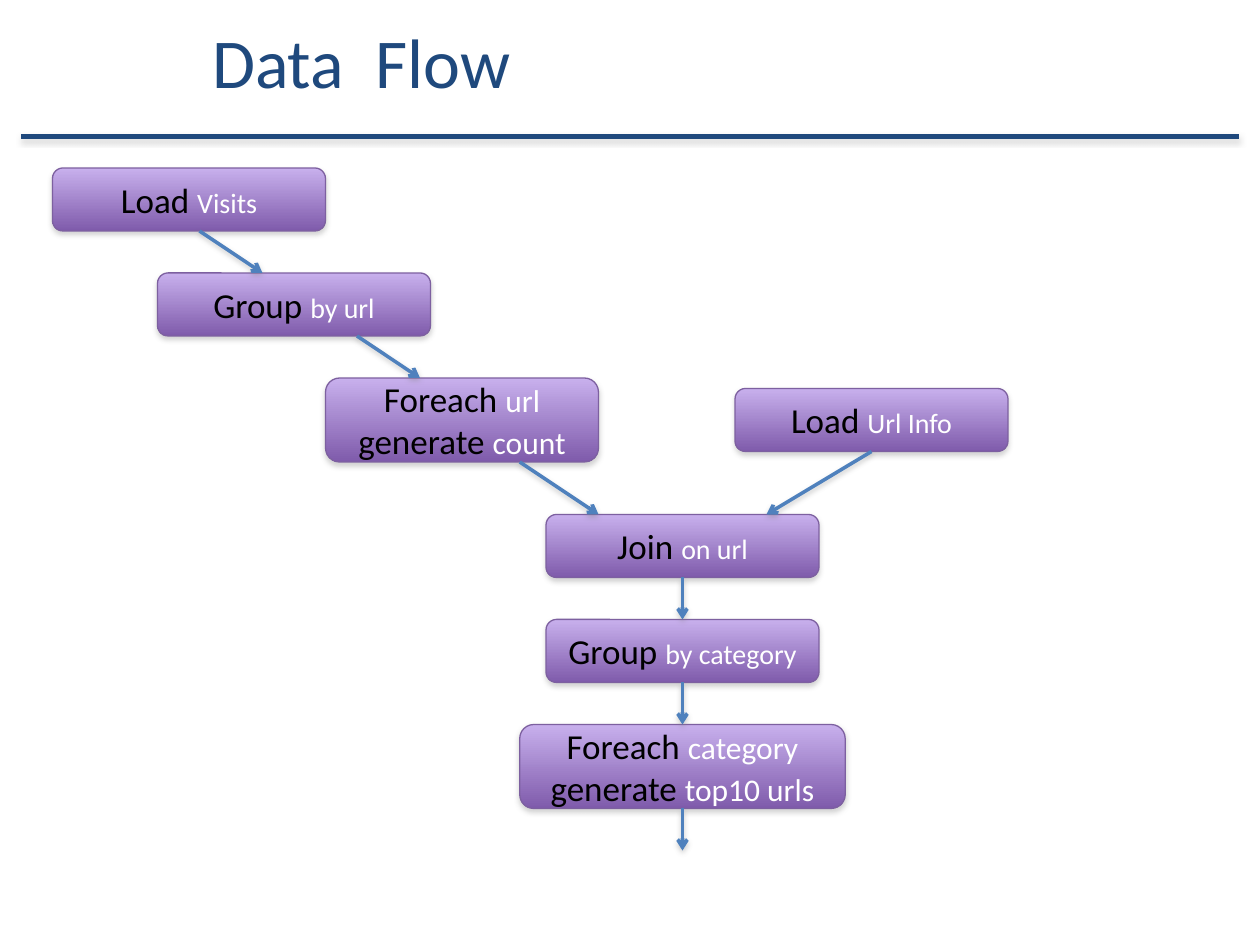
from dataclasses import dataclass

from lxml import etree
from pptx import Presentation
from pptx import util as u
from pptx.dml.color import RGBColor
from pptx.enum import shapes, text
from pptx.oxml.ns import qn

PX = 7620  # EMU per px, 120 px to the inch
BOTTOM, TOP = 2, 0


@dataclass(frozen=True)
class Theme:
    font: str = "Calibri"
    navy: str = "1F497D"
    arrow: str = "4F81BD"
    box_top: str = "C8B0ED"
    box_bottom: str = "7F5BAB"
    box_edge: str = "7D60A0"
    keyword: str = "000000"
    detail: str = "FFFFFF"
    shadow: str = "808080"
    title_size: int = 40
    keyword_size: int = 20
    detail_size: int = 16
    tall_detail_size: int = 18


THEME = Theme()

# name: (left, top, width, height), lines of (keyword, detail)
STEPS = {
    "load visits": ((50, 160, 260, 60), [("Load ", "Visits")]),
    "group by url": ((150, 260, 260, 60), [("Group ", "by url")]),
    "count": ((310, 360, 260, 80), [("Foreach ", "url"), ("generate ", "count")]),
    "load url info": ((700, 370, 260, 60), [("Load ", "Url Info")]),
    "join": ((520, 490, 260, 60), [("Join ", "on url")]),
    "group by category": ((520, 590, 260, 60), [("Group ", "by category")]),
    "top urls": ((495, 690, 310, 80),
                 [("Foreach ", "category"), ("generate ", "top10 urls")]),
}

# start, end, step joined at its bottom, step joined at its top
ARROWS = [
    ((190, 220), (250, 260), None, None),
    ((340, 320), (400, 360), None, None),
    ((495, 440), (570, 490), None, None),
    ((830, 430), (730, 490), "load url info", None),
    ((650, 550), (650, 590), "join", "group by category"),
    ((650, 650), (650, 690), "group by category", "top urls"),
    ((650, 770), (650, 810), "top urls", None),
]


def px(*lengths):
    return [u.Emu(length * PX) for length in lengths]


def add_text(paragraph, words, *, size, color):
    run = paragraph.add_run()
    run.text = words
    run.font.name = THEME.font
    run.font.size = u.Pt(size)
    run.font.color.rgb = RGBColor.from_string(color)


def add_shadow(shape, alpha, distance):
    """Give the shape a soft shadow straight below it."""
    effects = etree.SubElement(shape._element.spPr, qn("a:effectLst"))
    outer = etree.SubElement(
        effects, qn("a:outerShdw"), blurRad=str(u.Pt(3)),
        dist=str(u.Pt(distance)), dir="5400000", rotWithShape="0")
    color = etree.SubElement(outer, qn("a:srgbClr"), val=THEME.shadow)
    etree.SubElement(color, qn("a:alpha"), val=str(alpha * 1000))


def add_line(slide, start, end, *, color, width):
    line = slide.shapes.add_connector(
        shapes.MSO_CONNECTOR.STRAIGHT, *px(*start, *end))
    line.line.color.rgb = RGBColor.from_string(color)
    line.line.width = u.Pt(width)
    return line


def build_header(slide, box):
    """Fill the title placeholder and draw the rule below it."""
    left, top, width, height = box
    title = slide.shapes.title
    title.left, title.top, title.width, title.height = px(*box)
    frame = title.text_frame
    frame.word_wrap = True
    frame.auto_size = text.MSO_AUTO_SIZE.NONE
    frame.vertical_anchor = text.MSO_ANCHOR.MIDDLE
    paragraph = frame.paragraphs[0]
    paragraph.alignment = text.PP_ALIGN.LEFT
    add_text(paragraph, "Data  Flow", size=THEME.title_size, color=THEME.navy)
    rule_y = top + height + 20
    rule = add_line(slide, (left - 170, rule_y), (left + width - 10, rule_y),
                    color=THEME.navy, width=3)
    add_shadow(rule, 35, 1.8)


def build_step(slide, box, lines):
    step = slide.shapes.add_shape(
        shapes.MSO_SHAPE.ROUNDED_RECTANGLE, *px(*box))
    step.fill.gradient()
    step.fill.gradient_angle = 270
    for stop, color in zip(step.fill.gradient_stops,
                           (THEME.box_top, THEME.box_bottom)):
        stop.color.rgb = RGBColor.from_string(color)
    step.line.color.rgb = RGBColor.from_string(THEME.box_edge)
    step.line.width = u.Pt(0.75)
    add_shadow(step, 35, 1.8)

    frame = step.text_frame
    frame.word_wrap = True
    frame.vertical_anchor = text.MSO_ANCHOR.MIDDLE
    detail_size = THEME.detail_size if len(lines) == 1 else THEME.tall_detail_size
    for index, (keyword, detail) in enumerate(lines):
        paragraph = frame.add_paragraph() if index else frame.paragraphs[0]
        paragraph.alignment = text.PP_ALIGN.CENTER
        add_text(paragraph, keyword, size=THEME.keyword_size, color=THEME.keyword)
        add_text(paragraph, detail, size=detail_size, color=THEME.detail)
    return step


def build_flow(slide, origin):
    """Place the steps and their arrows relative to the origin."""
    x, y = origin
    steps = {
        name: build_step(slide, (x + left, y + top, width, height), lines)
        for name, ((left, top, width, height), lines) in STEPS.items()
    }
    for start, end, source, target in ARROWS:
        arrow = add_line(slide, (x + start[0], y + start[1]),
                         (x + end[0], y + end[1]), color=THEME.arrow, width=2)
        if source:
            arrow.begin_connect(steps[source], BOTTOM)
        if target:
            arrow.end_connect(steps[target], TOP)
        etree.SubElement(arrow.line._get_or_add_ln(), qn("a:tailEnd"), type="arrow")
        add_shadow(arrow, 38, 1.6)


def main():
    presentation = Presentation()
    presentation.slide_width, presentation.slide_height = px(1200, 900)
    title_only = presentation.slide_layouts[5]
    slide = presentation.slides.add_slide(title_only)
    build_header(slide, (190, 6, 1000, 104))
    build_flow(slide, (0, 0))
    presentation.save("out.pptx")


if __name__ == "__main__":
    main()
